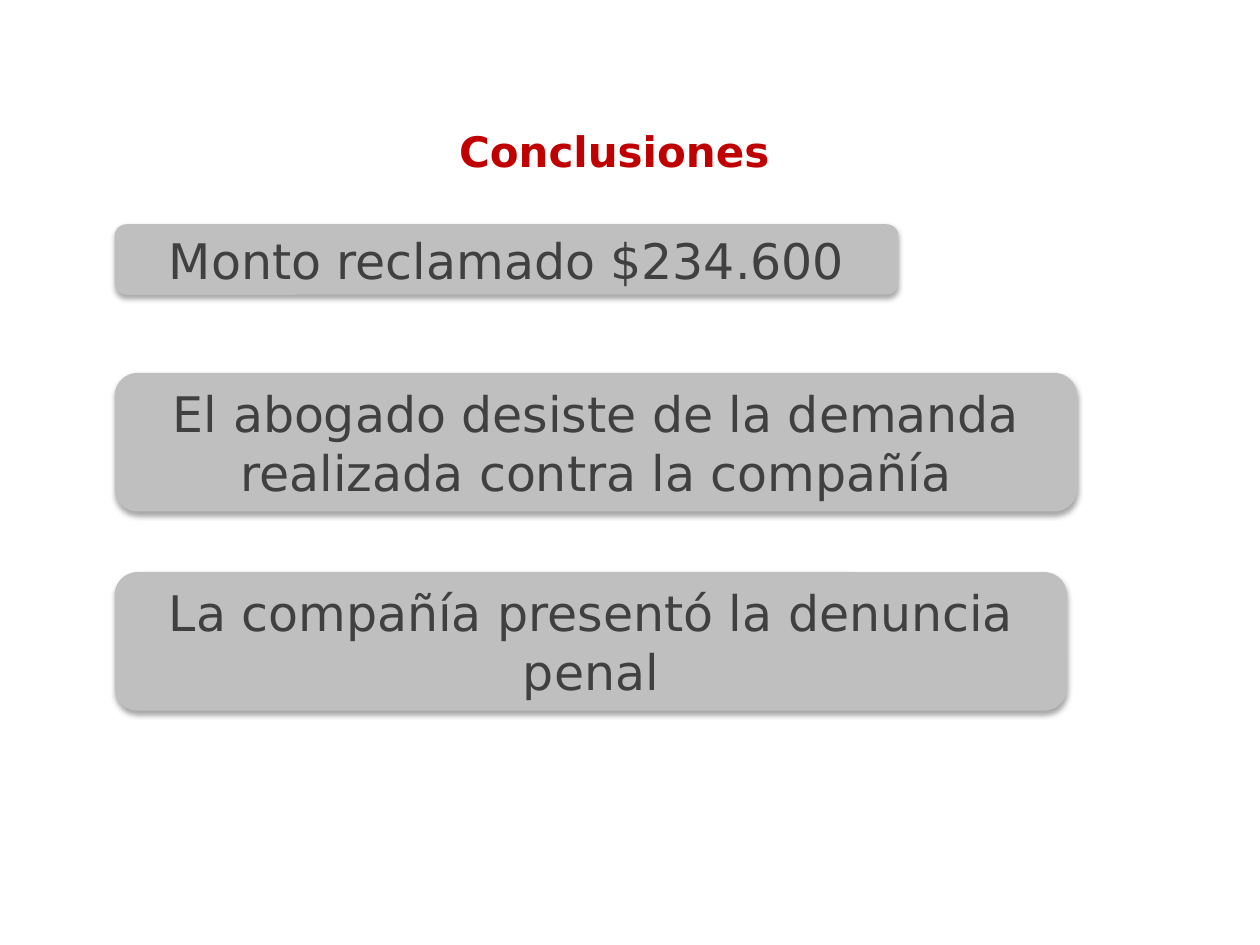
from lxml import etree
from pptx import Presentation
from pptx import util as u
from pptx.dml.color import RGBColor
from pptx.enum import shapes, text
from pptx.oxml.ns import qn

RED = RGBColor(0xC0, 0x00, 0x00)
GRAY = RGBColor(0xBF, 0xBF, 0xBF)
DARK = RGBColor(0x40, 0x40, 0x40)
FONT = "DejaVu Sans"

TITLE = "Conclusiones"
CARDS = [
    ("Monto reclamado $234.600", 1.78, 6.22, 0.56),
    ("El abogado desiste de la demanda realizada contra la compañía", 2.96, 7.64, 1.1),
    ("La compañía presentó la denuncia penal", 4.54, 7.56, 1.1),
]
LEFT = 0.91


def write(sp, content, size, color, bold=False):
    tf = sp.text_frame
    tf.word_wrap = True
    tf.vertical_anchor = text.MSO_ANCHOR.MIDDLE
    p = tf.paragraphs[0]
    p.alignment = text.PP_ALIGN.CENTER
    r = p.add_run()
    r.text = content
    r.font.name = FONT
    r.font.size = u.Pt(size)
    r.font.bold = bold
    r.font.color.rgb = color


def add_shadow(sp):
    sp.shadow.inherit = False
    effects = sp._element.spPr.find(qn("a:effectLst"))
    shadow = etree.SubElement(
        effects, qn("a:outerShdw"), blurRad=str(u.Pt(3.1)), dist=str(u.Pt(1.8)),
        dir=str(90 * 60000), rotWithShape="0")
    color = etree.SubElement(shadow, qn("a:srgbClr"), val="000000")
    etree.SubElement(color, qn("a:alpha"), val="35000")


prs = Presentation()
prs.slide_width, prs.slide_height = u.Inches(10), u.Inches(7.5)
s = prs.slides.add_slide(prs.slide_layouts[6])

for content, top, width, height in CARDS:
    sp = s.shapes.add_shape(shapes.MSO_SHAPE.ROUNDED_RECTANGLE,
                            *map(u.Inches, (LEFT, top, width, height)))
    sp.fill.solid()
    sp.fill.fore_color.rgb = GRAY
    sp.line.fill.background()
    add_shadow(sp)
    write(sp, content, 28, DARK)

title = s.shapes.add_textbox(*map(u.Inches, (0.34, 0.84, 9.07, 0.71)))
write(title, TITLE, 24, RED, bold=True)

prs.save("out.pptx")
